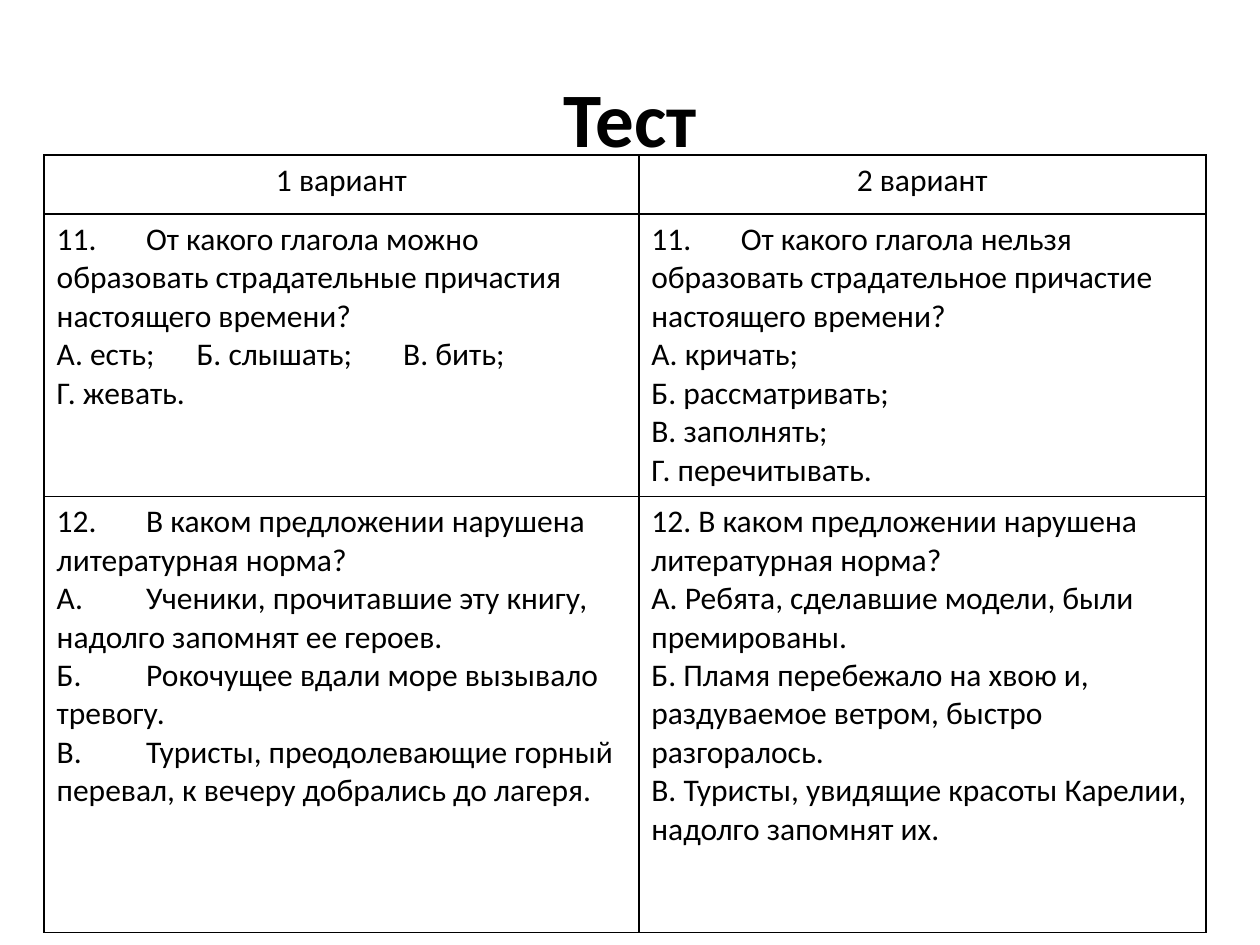
from lxml import etree
from pptx import Presentation
from pptx.dml.color import RGBColor
from pptx.enum.text import MSO_ANCHOR, PP_ALIGN
from pptx.oxml.ns import qn
from pptx.util import Inches, Pt

CENTER, LEFT = PP_ALIGN.CENTER, PP_ALIGN.LEFT
MIDDLE, TOP = MSO_ANCHOR.MIDDLE, MSO_ANCHOR.TOP
COLORS = {"ink": "000000"}
FONT = "Calibri"
INK = RGBColor.from_string(COLORS["ink"])
COLUMN_WIDTHS = [4.72, 4.5]
ROW_HEIGHTS = [0.47, 2.24, 3.46]
NUMBER_STOPS = [0.71]
OPTION_STOPS = [1.11, 2.75]

ROWS = [
    [["1 вариант"], ["2 вариант"]],
    [
        [
            "11.\tОт какого глагола можно образовать страдательные причастия настоящего времени?",
            "А. есть;\tБ. слышать;\tВ. бить;",
            "Г. жевать.",
        ],
        [
            "11.\tОт какого глагола нельзя образовать страдательное причастие настоящего времени?",
            "A. кричать;",
            "Б. рассматривать;",
            "B. заполнять;",
            "Г. перечитывать.",
        ],
    ],
    [
        [
            "12.\tВ каком предложении нарушена литературная норма?",
            "A.\tУченики, прочитавшие эту книгу, надолго запомнят ее героев.",
            "Б.\tРокочущее вдали море вызывало тревогу.",
            "B.\tТуристы, преодолевающие горный перевал, к вечеру добрались до лагеря.",
        ],
        [
            "12. В каком предложении нарушена литературная норма?",
            "А. Ребята, сделавшие модели, были премированы.",
            "Б. Пламя перебежало на хвою и, раздуваемое ветром, быстро разгоралось.",
            "В. Туристы, увидящие красоты Карелии, надолго запомнят их.",
        ],
    ],
]


def add_text(para, text, size, bold, align):
    para.alignment = align
    span = para.add_run()
    span.text = text
    span.font.name = FONT
    span.font.size = Pt(size)
    span.font.bold = bold
    span.font.color.rgb = INK


def add_tab_stops(para, stops):
    tabs = etree.SubElement(para._p.get_or_add_pPr(), qn("a:tabLst"))
    for stop in stops:
        etree.SubElement(tabs, qn("a:tab"), pos=str(Inches(stop)), algn="l")


deck = Presentation()
deck.slide_width, deck.slide_height = Inches(10), Inches(7.5)
page = deck.slides.add_slide(deck.slide_layouts[5])

title = page.shapes.title
title.left, title.top = Inches(0.5), Inches(0.3)
title.width, title.height = Inches(9), Inches(1.25)
title.text_frame.vertical_anchor = MIDDLE
add_text(title.text_frame.paragraphs[0], "Тест", 44, True, CENTER)

table = page.shapes.add_table(
    len(ROWS), len(COLUMN_WIDTHS), Inches(0.35), Inches(1.23),
    Inches(sum(COLUMN_WIDTHS)), Inches(sum(ROW_HEIGHTS)),
).table
table.first_row = False
table.horz_banding = False
for column, width in zip(table.columns, COLUMN_WIDTHS):
    column.width = Inches(width)
for row, height in zip(table.rows, ROW_HEIGHTS):
    row.height = Inches(height)

for row_index, row_texts in enumerate(ROWS):
    for column_index, lines in enumerate(row_texts):
        cell = table.cell(row_index, column_index)
        cell.vertical_anchor = TOP
        cell_properties = cell._tc.get_or_add_tcPr()
        for side in ("lnL", "lnR", "lnT", "lnB"):
            border = etree.SubElement(cell_properties, qn("a:" + side), w=str(Pt(1)))
            fill = etree.SubElement(border, qn("a:solidFill"))
            etree.SubElement(fill, qn("a:srgbClr"), val=COLORS["ink"])
        cell.fill.background()
        for line_index, line in enumerate(lines):
            frame = cell.text_frame
            para = frame.add_paragraph() if line_index else frame.paragraphs[0]
            if "\t" in line:
                add_tab_stops(para, OPTION_STOPS if line.count("\t") > 1 else NUMBER_STOPS)
            add_text(para, line, 18, False, LEFT if row_index else CENTER)

deck.save("out.pptx")
